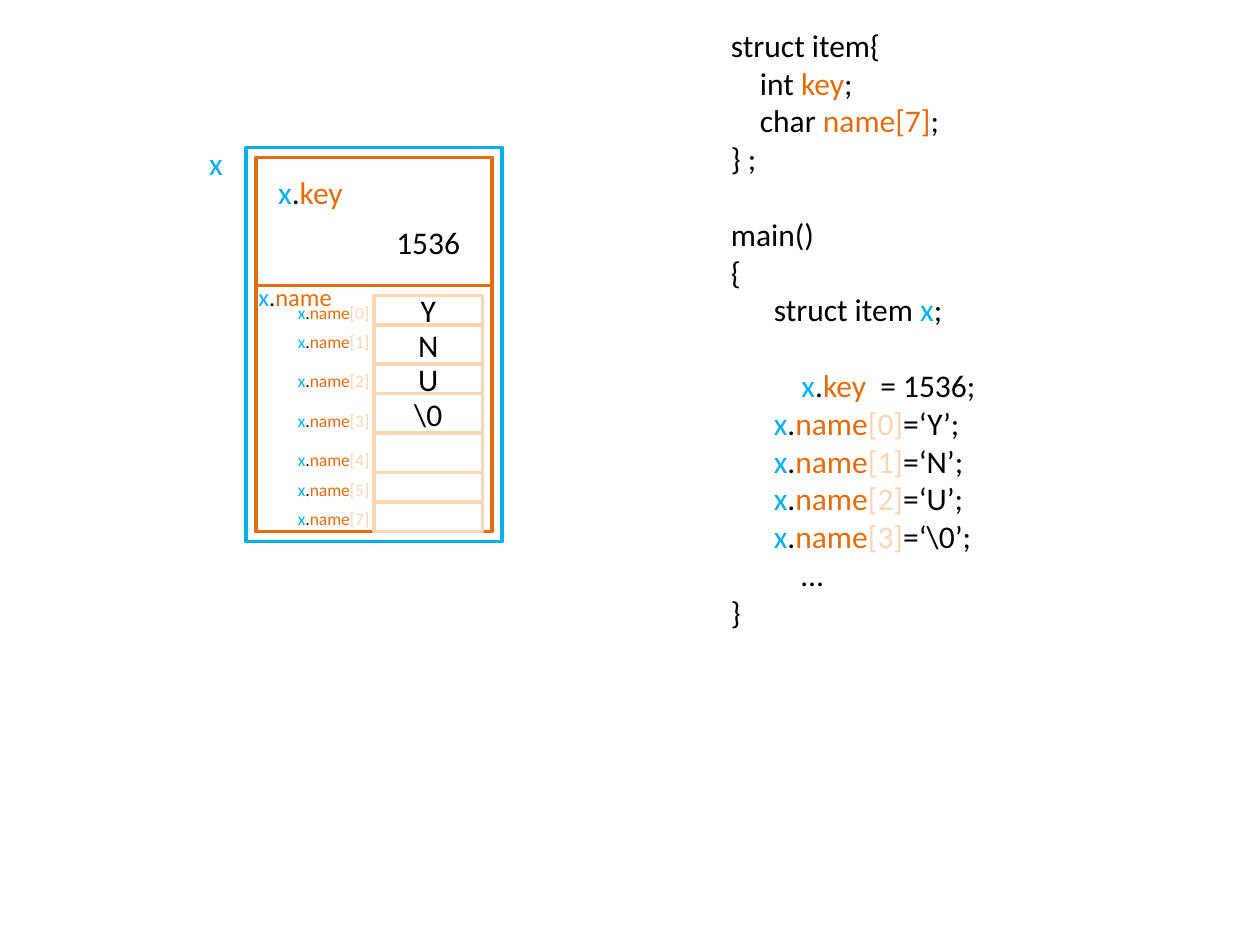
from itertools import accumulate

from pptx import Presentation
from pptx import util as u
from pptx.dml import color
from pptx.enum import shapes, text

COLOURS = {"variable": "00B0F0", "field": "E46C0A", "index": "FCD5B5", "plain": "000000"}
FONT = "Calibri"
UNIT = u.Inches(10) / 128          # the slide is 128 columns by 96 rows
CODE_LINE = u.Pt(21.6)             # height of one 18 pt line
INDENT = {"none": 0, "member": 0.23, "body": 0.34, "deep": 0.56}


def rgb(name):
    return color.RGBColor.from_string(COLOURS[name])


def grid(*cells):
    return [u.Emu(round(cell * UNIT)) for cell in cells]


def member(field, index=None):
    """Coloured spans for x.field or x.field[index]."""
    spans = [("x", "variable"), (".", "plain"), (field, "field")]
    return spans if index is None else spans + [(f"[{index}]", "index")]


def write(para, spans, size):
    para.font.name, para.font.size = FONT, u.Pt(size)
    for words, name in spans:
        span = para.add_run()
        span.text = words
        span.font.color.rgb = rgb(name)


def add_frame(page, box, name):
    frame = page.shapes.add_shape(shapes.MSO_SHAPE.RECTANGLE, *grid(*box))
    frame.shadow.inherit = False
    frame.fill.background()
    frame.line.width = u.Pt(2)
    frame.line.color.rgb = rgb(name)
    return frame


def add_label(page, box, spans, size=18):
    frame = page.shapes.add_textbox(*grid(*box)).text_frame
    frame.word_wrap = False
    frame.auto_size = text.MSO_AUTO_SIZE.SHAPE_TO_FIT_TEXT
    write(frame.paragraphs[0], spans, size)


def add_array(page, left, top, entries):
    """Array cells, each with its element label on the left."""
    tops = accumulate((rows for rows, *_ in entries[:-1]), initial=top)
    for cell_top, (rows, drop, index, value) in zip(tops, entries):
        cell = add_frame(page, (left + 9, cell_top, 11, rows), "index")
        if value:
            cell.text_frame.vertical_anchor = text.MSO_ANCHOR.MIDDLE
            para = cell.text_frame.paragraphs[0]
            para.alignment = text.PP_ALIGN.CENTER
            write(para, [(value, "plain")], 18)
        add_label(page, (left, cell_top + drop, 10, 3.45), member("name", index), 10)


def add_memory(page, left, top):
    """The variable x, holding its key and its name array."""
    add_frame(page, (left + 1, top + 1, 24, 13), "field")
    add_frame(page, (left + 1, top + 14, 24, 25), "field")
    add_frame(page, (left, top, 26, 40), "variable")
    add_label(page, (left - 5, top - 1, 4, 5.1), [("x", "variable")])
    add_label(page, (left + 2, top + 2, 9.25, 5.1), member("key"))
    add_label(page, (left + 14, top + 7, 9.1, 5.1), [("1536", "plain")])
    add_label(page, (left, top + 13, 10.1, 4.3), member("name"), 14)
    # Rows, label drop, index and value of each array element
    add_array(page, left + 4, top + 15, [
        (3, 0, 0, "Y"), (4, 0, 1, "N"), (3, 0, 2, "U"), (4, 1, 3, "\\0"),
        (4, 1, 4, ""), (3, 0, 5, ""), (3, 0, 7, "")])


def add_code(page, box):
    """Program listing: indent, lines skipped above, spans."""
    listing = [
        ("none", 0, [("struct item{", "plain")]),
        ("member", 0, [("int ", "plain"), ("key", "field"), (";", "plain")]),
        ("member", 0, [("char ", "plain"), ("name[7]", "field"), (";", "plain")]),
        ("none", 0, [("} ;", "plain")]),
        ("none", 1, [("main()", "plain")]),
        ("none", 0, [("{", "plain")]),
        ("body", 0, [("struct item ", "plain"), ("x", "variable"), (";", "plain")]),
        ("deep", 1, member("key") + [("  = 1536;", "plain")]),
        *[("body", 0, member("name", index) + [(f"=‘{value}’;", "plain")])
          for index, value in enumerate(["Y", "N", "U", "\\0"])],
        ("deep", 0, [("…", "plain")]),
        ("none", 0, [("}", "plain")]),
    ]
    frame = page.shapes.add_textbox(*grid(*box)).text_frame
    frame.word_wrap = True
    for number, (indent, skipped, spans) in enumerate(listing):
        para = frame.add_paragraph() if number else frame.paragraphs[0]
        para.space_before = u.Emu(skipped * CODE_LINE)
        para._p.get_or_add_pPr().set("marL", str(u.Inches(INDENT[indent])))
        write(para, spans, 18)


def main():
    deck = Presentation()
    deck.slide_width, deck.slide_height = u.Inches(10), u.Inches(7.5)
    page = deck.slides.add_slide(deck.slide_layouts[6])
    add_memory(page, 25, 15)
    add_code(page, (73, 2, 28, 63.4))
    deck.save("out.pptx")


if __name__ == "__main__":
    main()
